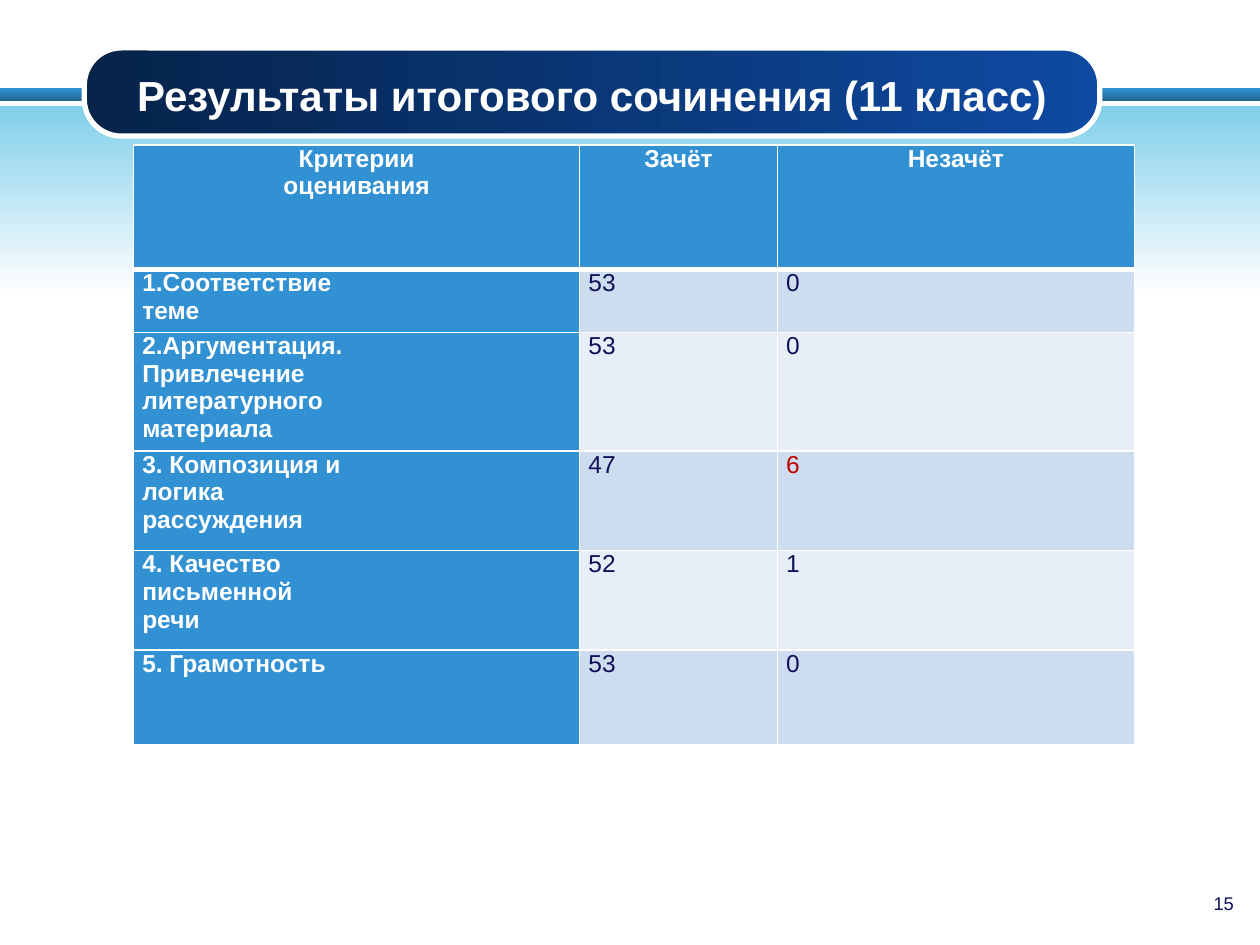
from lxml import etree
from pptx import Presentation
from pptx.dml.color import RGBColor
from pptx.enum import shapes, text
from pptx.oxml import ns
from pptx.util import Pt

WHITE, BLUE, NAVY, RED = "FFFFFF", "3191D3", "0D1259", "C00000"
BANDS = ("CEDCEF", "E8EEF7")
COLUMNS = (255, 113, 204)
ROWS = (71.3, 36, 67.7, 56.9, 56.9, 54)
HEADINGS = ("Критерии\nоценивания", "Зачёт", "Незачёт")
RESULTS = (
    ("1.Соответствие\nтеме", "53", "0"),
    ("2.Аргументация.\nПривлечение\nлитературного\nматериала", "53", "0"),
    ("3. Композиция и\nлогика\nрассуждения", "47", "6"),
    ("4. Качество\nписьменной\nречи", "52", "1"),
    ("5. Грамотность", "53", "0"),
)


def color(value):
    """Turn a hex string into a colour."""
    return RGBColor.from_string(value)


def write(frame, content, size, ink, align, bold=False):
    """Write lines of text as evenly styled paragraphs."""
    frame.word_wrap = True
    frame.text = content
    for paragraph in frame.paragraphs:
        paragraph.alignment = align
        font = paragraph.font
        font.name, font.size, font.bold = "Arial", Pt(size), bold
        font.color.rgb = color(ink)


def add_band(page, kind, bounds, start, end, angle):
    """Add a borderless shape with a two-colour gradient."""
    band = page.shapes.add_shape(kind, *map(Pt, bounds))
    band.shadow.inherit = False
    band.line.fill.background()
    band.fill.gradient()
    band.fill.gradient_angle = angle
    for stop, value in zip(band.fill.gradient_stops, (start, end)):
        stop.color.rgb = color(value)
    return band


def add_text(page, bounds, content, size, ink, align, anchor, bold=False):
    """Add a text box."""
    box = page.shapes.add_textbox(*map(Pt, bounds))
    box.text_frame.vertical_anchor = anchor
    write(box.text_frame, content, size, ink, align, bold)


def set_borders(cell, bottom):
    """Draw white borders around a cell, placed ahead of its fill."""
    properties = cell._tc.get_or_add_tcPr()
    for index, (side, width) in enumerate(zip("LRTB", (1, 1, 1, bottom))):
        line = etree.Element(ns.qn(f"a:ln{side}"), w=str(Pt(width)))
        fill = etree.SubElement(line, ns.qn("a:solidFill"))
        etree.SubElement(fill, ns.qn("a:srgbClr"), val=WHITE)
        properties.insert(index, line)


def fill_cell(cell, content, fill, ink, align, bold, bottom):
    """Set the text, fill, insets and borders of a cell."""
    cell.margin_left = cell.margin_right = Pt(5)
    cell.margin_top = cell.margin_bottom = 0
    cell.fill.solid()
    cell.fill.fore_color.rgb = color(fill)
    write(cell.text_frame, content, 14, ink, align, bold)
    set_borders(cell, bottom)


def add_results(page):
    """Add the table of essay results."""
    bounds = (76.3, 82.8, sum(COLUMNS), sum(ROWS))
    table = page.shapes.add_table(len(ROWS), len(COLUMNS), *map(Pt, bounds)).table
    table.horz_banding = False
    for column, width in zip(table.columns, COLUMNS):
        column.width = Pt(width)
    for row, height in zip(table.rows, ROWS):
        row.height = Pt(height)
    for r, values in enumerate((HEADINGS, *RESULTS)):
        for c, value in enumerate(values):
            heading = r == 0 or c == 0
            failed = c == 2 and value == "6"
            fill_cell(
                table.cell(r, c),
                value,
                BLUE if heading else BANDS[(r - 1) % 2],
                WHITE if heading else RED if failed else NAVY,
                text.PP_ALIGN.JUSTIFY if r else text.PP_ALIGN.CENTER,
                heading,
                1 if r else 3,
            )


def main():
    """Build and save the slide."""
    deck = Presentation()
    deck.slide_width, deck.slide_height = Pt(720), Pt(540)
    page = deck.slides.add_slide(deck.slide_layouts[6])
    kinds = shapes.MSO_SHAPE
    add_band(page, kinds.RECTANGLE, (0, 50.4, 720, 7.2), BLUE, "236897", 270)
    add_band(page, kinds.RECTANGLE, (0, 60.5, 720, 107.3), "81CFEB", WHITE, 270)
    plate = add_band(page, kinds.ROUNDED_RECTANGLE, (48.2, 27.4, 580.3, 50.4), "06234A", "0E4AA2", 0)
    plate.adjustments[0] = 0.42
    plate.line.color.rgb = color(WHITE)
    plate.line.width = Pt(3)
    add_text(page, (65.5, 31.7, 552.2, 44.6), "Результаты итогового сочинения (11 класс) ", 24,
             WHITE, text.PP_ALIGN.CENTER, text.MSO_ANCHOR.MIDDLE, True)
    add_text(page, (646.6, 506.2, 65.5, 23), "15", 10.5,
             NAVY, text.PP_ALIGN.RIGHT, text.MSO_ANCHOR.TOP)
    add_results(page)
    deck.save("out.pptx")


if __name__ == "__main__":
    main()
